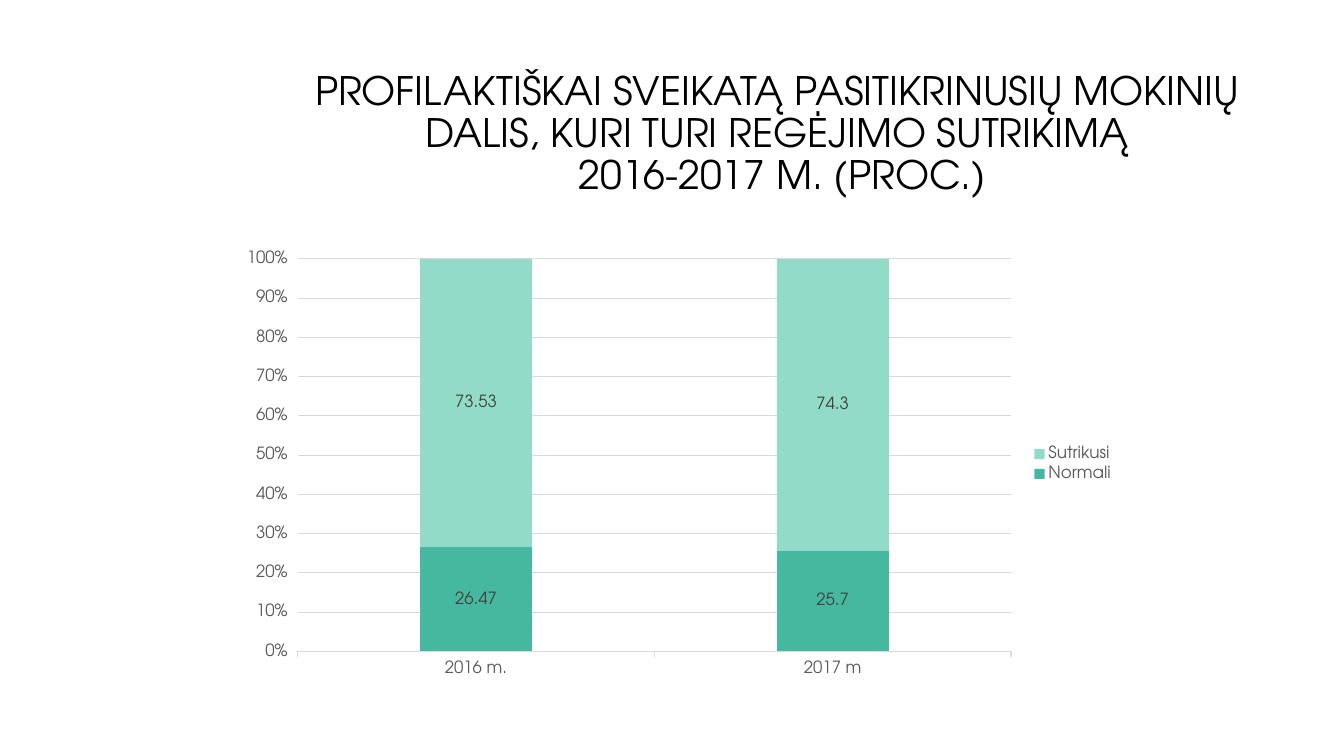
from pptx import Presentation
from pptx import util as u
from pptx.chart import data as cd
from pptx.dml import color as col
from pptx.enum import chart as ch, text as tx

FONT = "TeX Gyre Adventor"
GREY = "595959"
RULE = "D9D9D9"


def rgb(code):
    return col.RGBColor.from_string(code)


def style(font, size, code):
    font.name = FONT
    font.size = u.Pt(size)
    font.bold = False
    font.color.rgb = rgb(code)


def rule(line):
    line.color.rgb = rgb(RULE)
    line.width = u.Pt(0.75)


def add_title(slide, words, left, top, width, height):
    box = slide.shapes.add_textbox(*map(u.Pt, (left, top, width, height)))
    frame = box.text_frame
    frame.word_wrap = True
    frame.vertical_anchor = tx.MSO_ANCHOR.MIDDLE
    para = frame.paragraphs[0]
    para.text = words
    para.alignment = tx.PP_ALIGN.CENTER
    para.line_spacing = 0.9
    for run in para.runs:
        style(run.font, 28, "000000")


def add_bars(slide, cats, rows, left, top, width, height):
    data = cd.CategoryChartData()
    data.categories = cats
    for name, vals, _ in rows:
        data.add_series(name, vals)
    chart = slide.shapes.add_chart(
        ch.XL_CHART_TYPE.COLUMN_STACKED_100,
        *map(u.Pt, (left, top, width, height)), data).chart
    chart.has_title = False
    style(chart.font, 12, GREY)

    # Bars and value labels
    plot = chart.plots[0]
    plot.vary_by_categories = False
    plot.gap_width = 219
    plot.overlap = 100
    for bar, (_, _, code) in zip(plot.series, rows):
        bar.format.fill.solid()
        bar.format.fill.fore_color.rgb = rgb(code)
        tags = bar.data_labels
        tags.show_value = True
        tags.position = ch.XL_LABEL_POSITION.CENTER
        style(tags.font, 12, "404040")

    # Axes and grid
    base, side = chart.category_axis, chart.value_axis
    for axis in (base, side):
        style(axis.tick_labels.font, 12, GREY)
    base.major_tick_mark = ch.XL_TICK_MARK.OUTSIDE
    rule(base.format.line)
    side.major_tick_mark = ch.XL_TICK_MARK.OUTSIDE
    side.format.line.fill.background()
    side.tick_labels.number_format = "0%"
    side.tick_labels.number_format_is_linked = False
    side.has_major_gridlines = True
    rule(side.major_gridlines.format.line)

    # Legend
    chart.has_legend = True
    chart.legend.position = ch.XL_LEGEND_POSITION.RIGHT
    chart.legend.include_in_layout = False
    style(chart.legend.font, 12, GREY)


def main():
    deck = Presentation()
    deck.slide_width, deck.slide_height = u.Pt(960), u.Pt(540)
    slide = deck.slides.add_slide(deck.slide_layouts[6])

    add_title(slide, "PROFILAKTIŠKAI SVEIKATĄ PASITIKRINUSIŲ MOKINIŲ DALIS, "
              "KURI TURI REGĖJIMO SUTRIKIMĄ\v 2016-2017 M. (PROC.)",
              216, 19.5, 678, 153.5)

    rows = [("Normali", (26.47, 25.7), "47B8A0"),
            ("Sutrikusi", (73.53, 74.3), "93DBC9")]
    add_bars(slide, ["2016 m.", "2017 m"], rows, 163.5, 173, 640, 317)

    deck.save("out.pptx")


if __name__ == "__main__":
    main()
